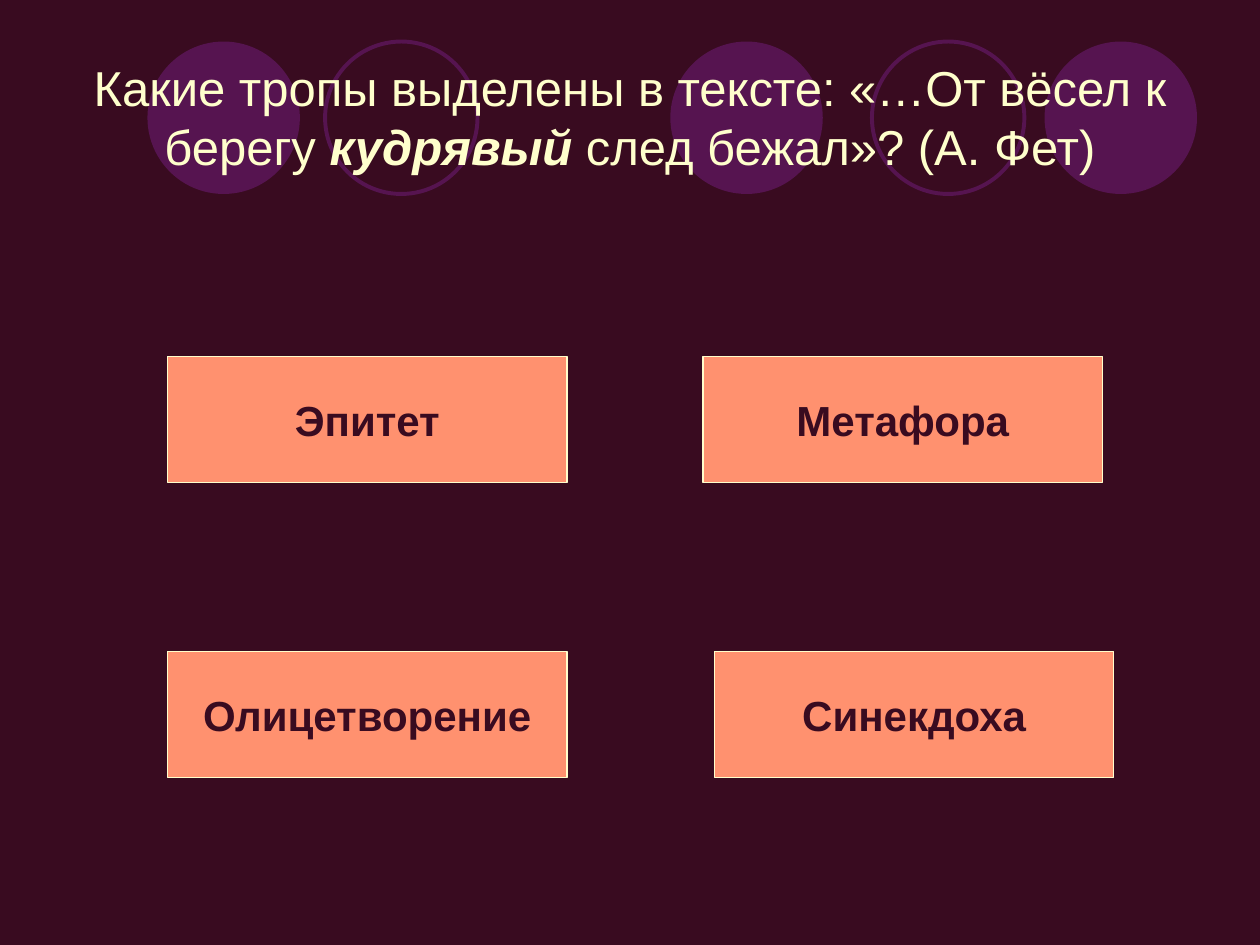
from pptx import Presentation
from pptx.dml.color import RGBColor
from pptx.enum.shapes import MSO_SHAPE
from pptx.enum.text import MSO_ANCHOR, MSO_AUTO_SIZE, PP_ALIGN
from pptx.util import Inches, Pt


def color(code):
    return RGBColor.from_string(code)


class Quiz:
    font = "Arial"
    back = "390B20"
    disc = "561450"
    cream = "FFFFCC"
    coral = "FF916F"

    def __init__(self, deck):
        # Title-only layout on a dark ground
        self.slide = deck.slides.add_slide(deck.slide_layouts[5])
        fill = self.slide.background.fill
        fill.solid()
        fill.fore_color.rgb = color(self.back)

    def shape(self, kind, box, fill=None, line=None, width=0):
        item = self.slide.shapes.add_shape(kind, *map(Inches, box))
        item.shadow.inherit = False
        if fill:
            item.fill.solid()
            item.fill.fore_color.rgb = color(fill)
        else:
            item.fill.background()
        if line:
            item.line.color.rgb = color(line)
            item.line.width = Pt(width)
        else:
            item.line.fill.background()
        return item

    def style(self, run, size, code, bold=False, italic=False):
        font = run.font
        font.name = self.font
        font.size = Pt(size)
        font.color.rgb = color(code)
        font.bold = bold
        font.italic = italic

    def circle(self, left, solid):
        box = (left, 0.33, 1.21, 1.21)
        if solid:
            self.shape(MSO_SHAPE.OVAL, box, fill=self.disc)
        else:
            self.shape(MSO_SHAPE.OVAL, box, line=self.disc, width=2.25)

    def title(self, parts):
        item = self.slide.shapes.title
        item.left, item.top = Inches(0.5), Inches(0.3)
        item.width, item.height = Inches(9), Inches(1.25)
        # Bring the title in front of the circles
        item.element.getparent().append(item.element)
        frame = item.text_frame
        frame.word_wrap = True
        frame.auto_size = MSO_AUTO_SIZE.NONE
        frame.vertical_anchor = MSO_ANCHOR.MIDDLE
        line = frame.paragraphs[0]
        line.alignment = PP_ALIGN.CENTER
        for text, strong in parts:
            run = line.add_run()
            run.text = text
            self.style(run, 28, self.cream, strong, strong)

    def answer(self, text, left, top):
        item = self.shape(MSO_SHAPE.RECTANGLE, (left, top, 3.17, 1),
                          self.coral, self.cream, 0.75)
        frame = item.text_frame
        frame.text = text
        frame.word_wrap = False
        frame.vertical_anchor = MSO_ANCHOR.MIDDLE
        line = frame.paragraphs[0]
        line.alignment = PP_ALIGN.CENTER
        self.style(line.runs[0], 24, self.back, bold=True)


def main():
    deck = Presentation()
    deck.slide_width, deck.slide_height = Inches(10), Inches(7.5)
    quiz = Quiz(deck)

    # Row of circles behind the title
    for left, solid in ((1.17, True), (2.58, False), (5.32, True),
                        (6.92, False), (8.29, True)):
        quiz.circle(left, solid)

    # Question
    quiz.title((
        ("Какие тропы выделены в тексте: «…От вёсел к берегу ", False),
        ("кудрявый ", True),
        ("след бежал»? (А. Фет)", False),
    ))

    # Answers
    for text, left, top in (("Эпитет", 1.33, 2.83),
                            ("Метафора", 5.58, 2.83),
                            ("Олицетворение", 1.33, 5.17),
                            ("Синекдоха", 5.67, 5.17)):
        quiz.answer(text, left, top)

    deck.save("out.pptx")


if __name__ == "__main__":
    main()
